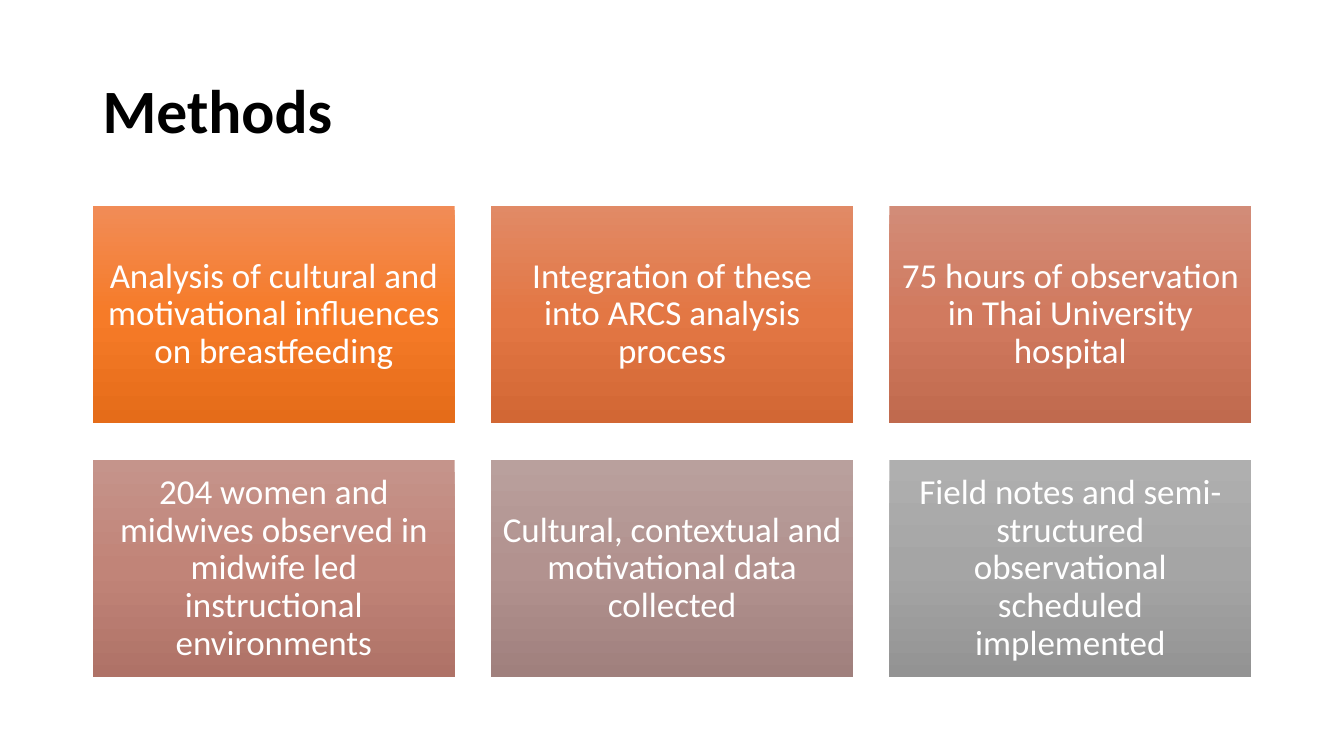
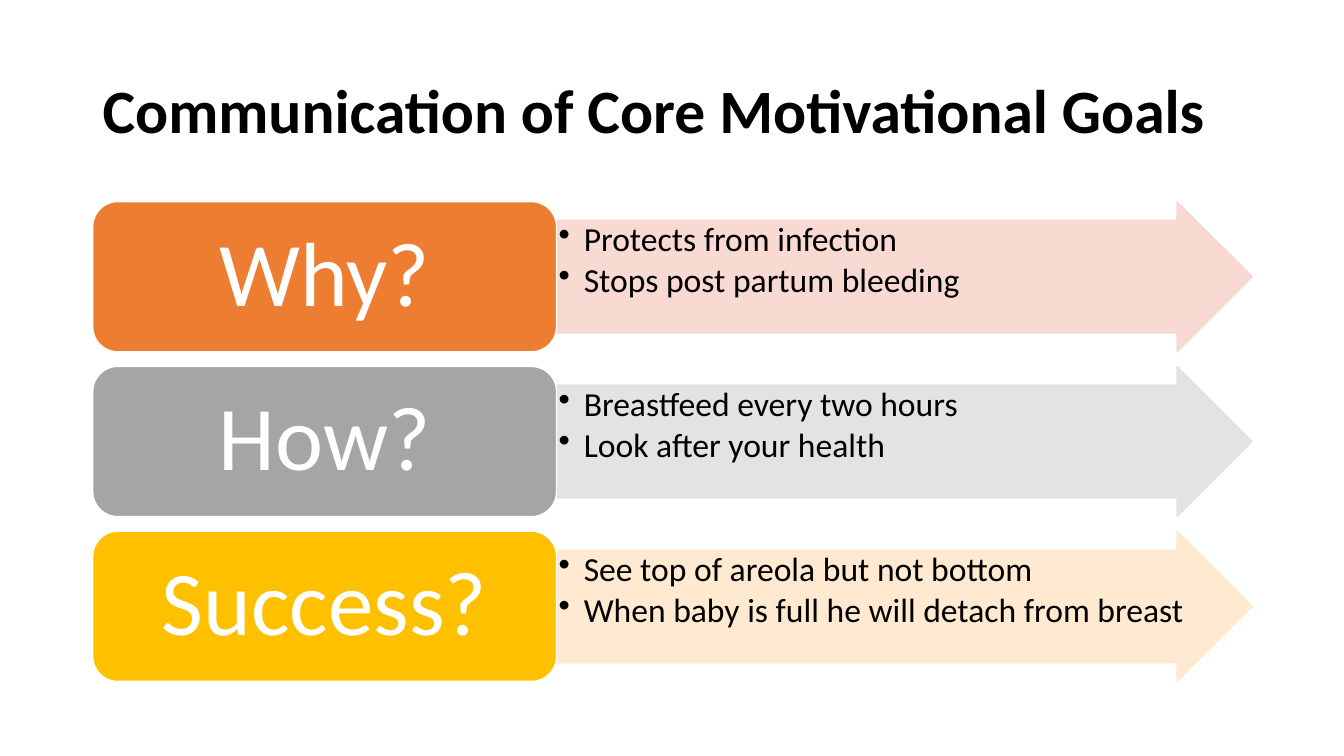
from copy import deepcopy

from lxml import etree
from pptx import Presentation
from pptx.dml.color import RGBColor
from pptx.enum.shapes import MSO_SHAPE
from pptx.enum.text import MSO_ANCHOR, PP_ALIGN
from pptx.oxml.ns import qn
from pptx.util import Inches, Pt

RECTANGLE = MSO_SHAPE.RECTANGLE
ROUNDED = MSO_SHAPE.ROUNDED_RECTANGLE
ARROW = MSO_SHAPE.RIGHT_ARROW
TOP, MIDDLE = MSO_ANCHOR.TOP, MSO_ANCHOR.MIDDLE
LEFT, CENTER = PP_ALIGN.LEFT, PP_ALIGN.CENTER

COLORS = {
    "ink": "000000",
    "paper": "FFFFFF",
    "why": "ED7D31",
    "why_tint": "F8D7CE",
    "how": "A5A5A5",
    "how_tint": "E1E1E1",
    "success": "FFC000",
    "success_tint": "FFE8CC",
}
METHODS = [
    ("Analysis of cultural and motivational influences on breastfeeding",
     ("F18C57", "F67B28", "E56C19")),
    ("Integration of these into ARCS analysis process",
     ("E18A66", "E37744", "D26734")),
    ("75 hours of observation in Thai University hospital",
     ("D28C78", "D17A5F", "C06A4E")),
    ("204 women and midwives observed in midwife led instructional environments",
     ("C5948B", "C18478", "AF7267")),
    ("Cultural, contextual and motivational data collected",
     ("B9A09D", "B2928F", "A0807D")),
    ("Field notes and semi-structured observational scheduled implemented",
     ("AFAFAF", "A5A5A5", "939393")),
]
GOALS = [
    ("Why?", "why", ["Protects from infection", "Stops post partum bleeding"]),
    ("How?", "how", ["Breastfeed every two hours", "Look after your health"]),
    ("Success?", "success", ["See top of areola but not bottom",
                             "When baby is full he will detach from breast"]),
]
MARGIN = 0.92
CARD_WIDTH, CARD_HEIGHT, CARD_GAP, CARDS_TOP = 3.59, 2.16, 0.36, 2.04
CARD_COLUMNS = 3
LABEL_WIDTH, ARROW_WIDTH, GOAL_HEIGHT = 4.6, 6.9, 1.49
FIRST_GOAL_TOP, LAST_GOAL_TOP = 2, 5.27


def assign(target, values):
    for name, value in values.items():
        setattr(target, name, value)


class Deck:
    font = "Calibri"
    line_spacing = 0.9

    def __init__(self):
        self.presentation = Presentation()
        assign(self.presentation, {"slide_width": Inches(13.33),
                                   "slide_height": Inches(7.5)})
        self.slide = None

    def start_slide(self, title):
        blank = self.presentation.slide_layouts[6]
        self.slide = self.presentation.slides.add_slide(blank)
        heading = self.slide.shapes.add_textbox(
            Inches(MARGIN), Inches(0.4), Inches(11.5), Inches(1.45))
        self.set_text(heading, [title], 44, "ink", (0.1, 0.05), align=LEFT, bold=True)

    def set_text(self, shape, lines, size, color, inset, align=CENTER,
                 anchor=MIDDLE, bold=False, after=0):
        frame = shape.text_frame
        side, end = map(Inches, inset)
        assign(frame, {"word_wrap": True, "vertical_anchor": anchor,
                       "margin_left": side, "margin_right": side,
                       "margin_top": end, "margin_bottom": end})
        frame.text = "\n".join(lines)
        for paragraph in frame.paragraphs:
            assign(paragraph, {"alignment": align, "space_after": Pt(after),
                               "line_spacing": self.line_spacing})
            font = paragraph.runs[0].font
            assign(font, {"name": self.font, "size": Pt(size), "bold": bold})
            font.color.rgb = RGBColor.from_string(COLORS[color])

    def block(self, kind, left, top, width, height):
        shape = self.slide.shapes.add_shape(
            kind, Inches(left), Inches(top), Inches(width), Inches(height))
        shape.shadow.inherit = False
        return shape

    def paint(self, shape, fill, line):
        shape.fill.solid()
        shape.fill.fore_color.rgb = RGBColor.from_string(COLORS[fill])
        shape.line.color.rgb = RGBColor.from_string(COLORS[line])
        shape.line.width = Pt(1)

    def card(self, left, top, text, shades):
        card = self.block(RECTANGLE, left, top, CARD_WIDTH, CARD_HEIGHT)
        card.line.fill.background()
        card.fill.gradient()
        card.fill.gradient_angle = 270
        stop_list = card._element.spPr.find(".//" + qn("a:gsLst"))
        stop_list.append(deepcopy(stop_list[0]))
        for stop, position, shade in zip(card.fill.gradient_stops, (0, 0.5, 1), shades):
            stop.position = position
            stop.color.rgb = RGBColor.from_string(shade)
        self.set_text(card, [text], 25, "paper", (0.1, 0.1))

    def arrow(self, top, color, points):
        arrow = self.block(ARROW, MARGIN + LABEL_WIDTH, top, ARROW_WIDTH, GOAL_HEIGHT)
        arrow.adjustments[0] = 0.75
        arrow.adjustments[1] = 0.5
        self.paint(arrow, color, color)
        for tint in arrow._element.spPr.iter(qn("a:srgbClr")):
            etree.SubElement(tint, qn("a:alpha"), val="90000")
        self.set_text(arrow, points, 24, "ink", (0.02, 0.02), align=LEFT,
                      anchor=TOP, after=3.6)
        for paragraph in arrow.text_frame.paragraphs:
            properties = paragraph._p.get_or_add_pPr()
            properties.set("marL", str(Inches(0.25)))
            properties.set("indent", str(-Inches(0.25)))
            etree.SubElement(properties, qn("a:buChar"), char="•")

    def label(self, top, color, text):
        label = self.block(ROUNDED, MARGIN, top, LABEL_WIDTH, GOAL_HEIGHT)
        self.paint(label, color, "paper")
        self.set_text(label, [text], 65, "paper", (0.27, 0.14))


def main():
    deck = Deck()

    deck.start_slide("Methods")
    for index, (method, shades) in enumerate(METHODS):
        row, column = divmod(index, CARD_COLUMNS)
        deck.card(MARGIN + column * (CARD_WIDTH + CARD_GAP),
                  CARDS_TOP + row * (CARD_HEIGHT + CARD_GAP), method, shades)

    deck.start_slide("Communication of Core Motivational Goals")
    pitch = (LAST_GOAL_TOP - FIRST_GOAL_TOP) / (len(GOALS) - 1)
    for index, (question, color, points) in enumerate(GOALS):
        top = FIRST_GOAL_TOP + index * pitch
        deck.arrow(top, color + "_tint", points)
        deck.label(top, color, question)

    deck.presentation.save("out.pptx")


if __name__ == "__main__":
    main()
